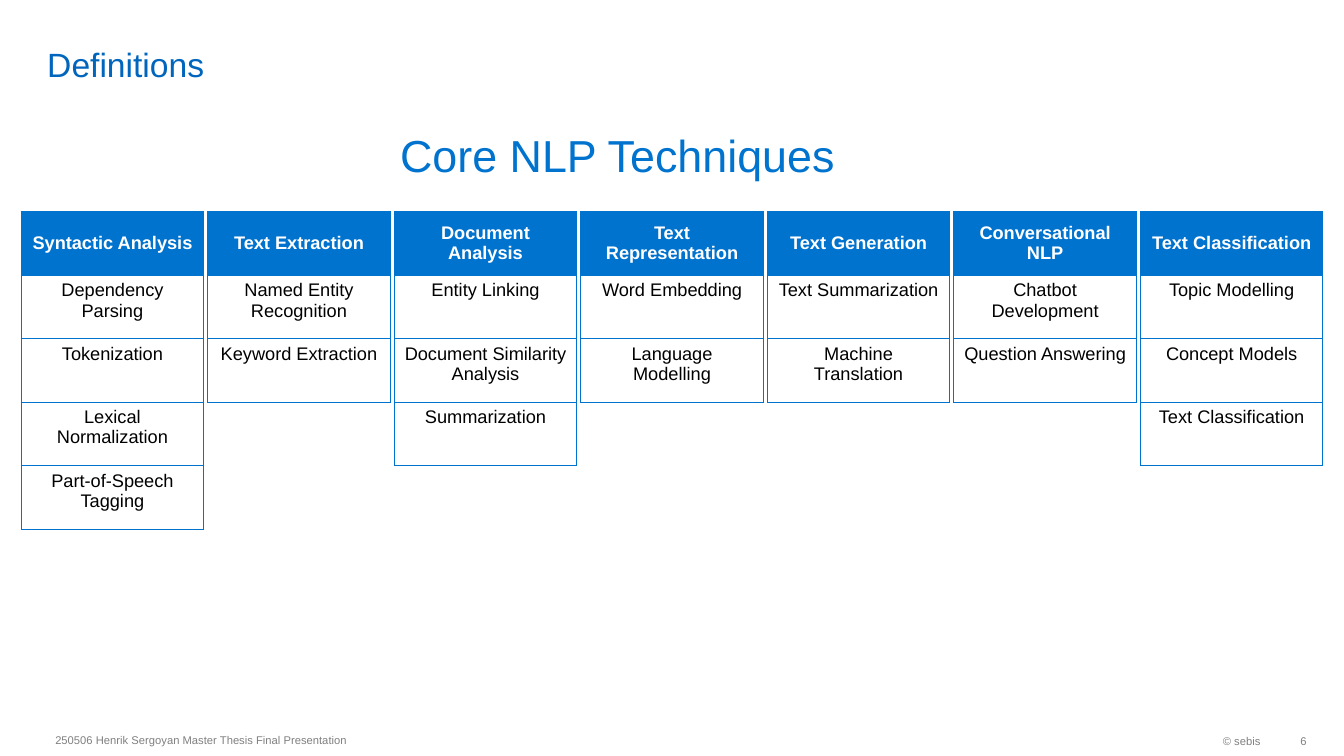
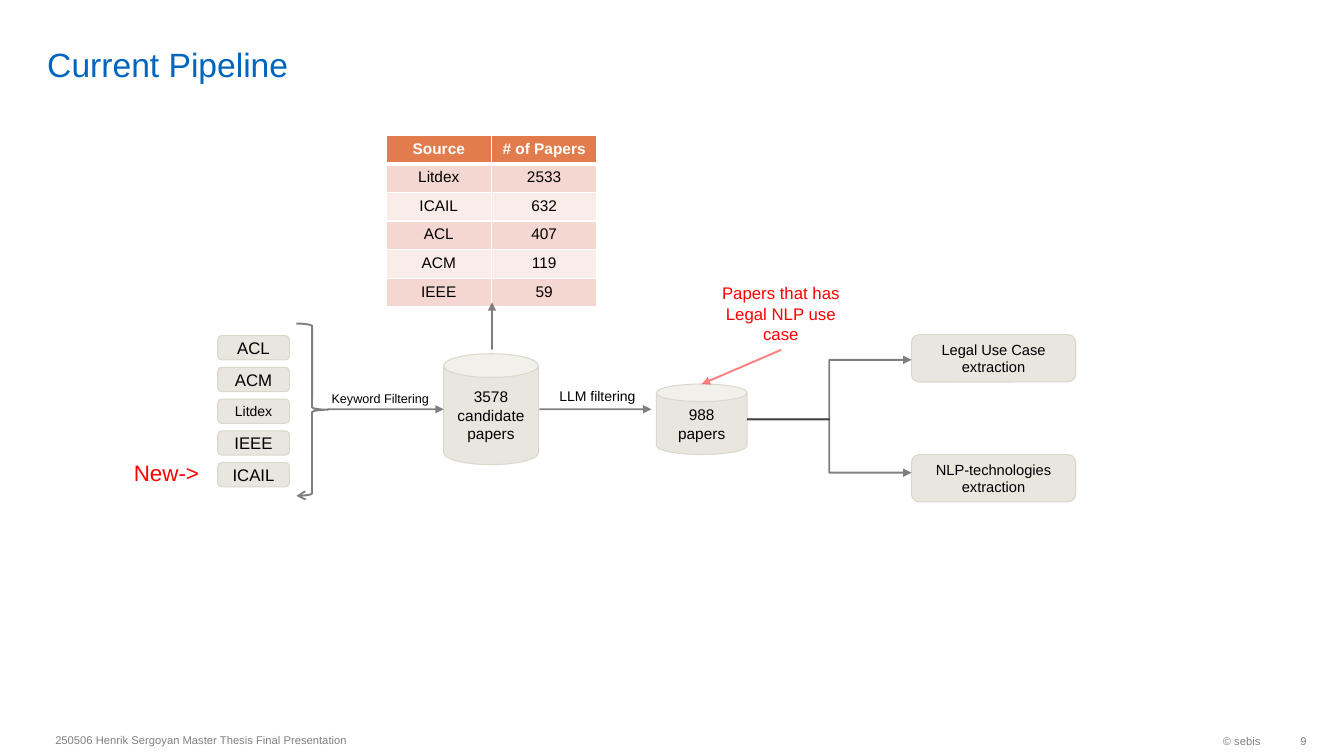
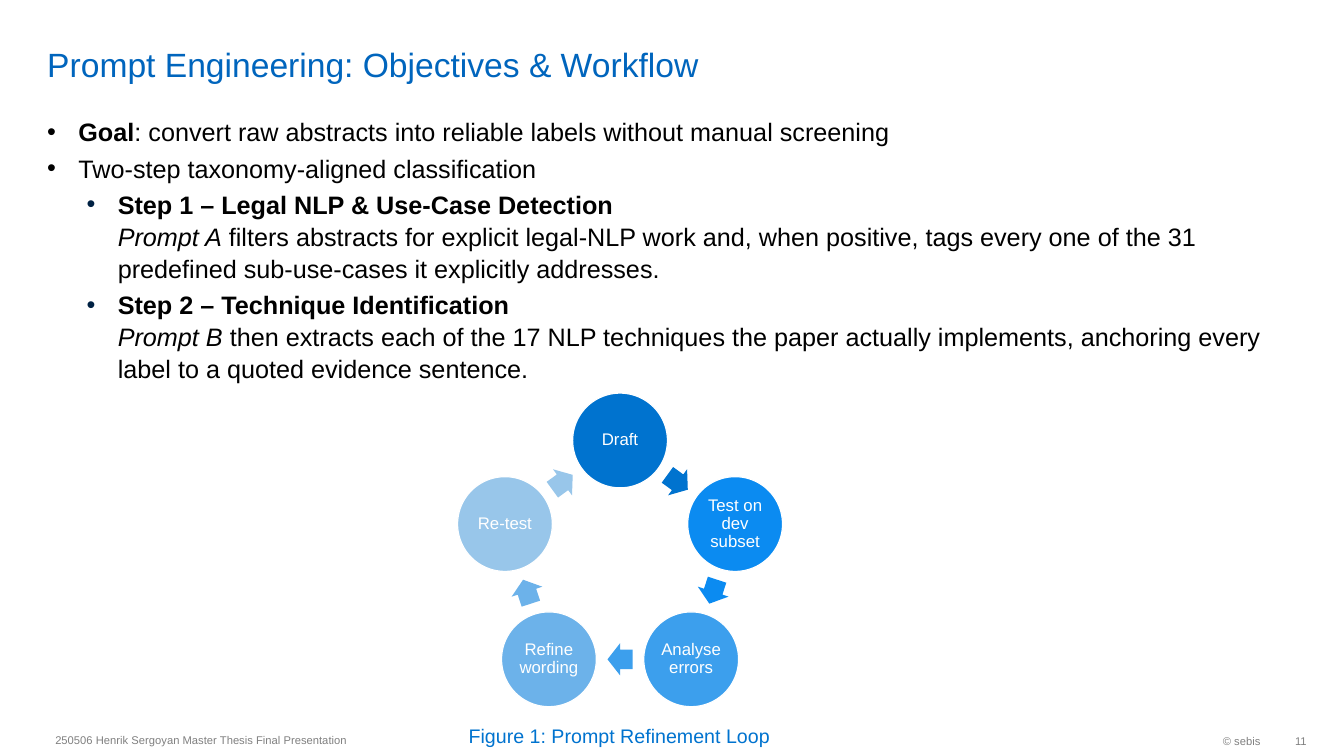
import math
from dataclasses import dataclass
from typing import NamedTuple

import lxml.etree
import pptx
import pptx.dml.color
import pptx.enum.dml
import pptx.enum.shapes
import pptx.enum.text
import pptx.oxml.ns
import pptx.slide
import pptx.text.text
import pptx.util

Inches = pptx.util.Inches
Pt = pptx.util.Pt
qn = pptx.oxml.ns.qn
Geometry = pptx.enum.shapes.MSO_SHAPE
Link = pptx.enum.shapes.MSO_CONNECTOR
Align = pptx.enum.text.PP_ALIGN
Anchor = pptx.enum.text.MSO_ANCHOR


@dataclass(frozen=True)
class Theme:
    font: str = "Arial"
    title: str = "0065BD"
    blue: str = "0073CF"
    navy: str = "002143"
    black: str = "000000"
    white: str = "FFFFFF"
    grey: str = "808080"
    red: str = "FF0000"
    node_fill: str = "E8E6DF"
    node_line: str = "DAD7CB"
    orange: str = "E37C4D"
    bands: tuple[str, ...] = ("F4D7D0", "FAECE9")
    title_size: float = 24
    heading_size: float = 32
    body_size: float = 18
    caption_size: float = 14
    technique_size: float = 13
    label_size: float = 12
    node_size: float = 11
    outcome_size: float = 10.5
    small_size: float = 10
    tiny_size: float = 9
    footer_size: float = 8


THEME = Theme()


class Box(NamedTuple):
    left: float
    top: float
    width: float
    height: float

    def lengths(self) -> list[int]:
        return [Inches(value) for value in self]


class Point(NamedTuple):
    x: float
    y: float


@dataclass(frozen=True)
class TextStyle:
    size: float
    color: str = THEME.black
    align: Align = Align.LEFT
    anchor: Anchor = Anchor.TOP
    insets: tuple[float, float, float, float] = (0.1, 0.05, 0.1, 0.05)
    wrap: bool = True
    bold: bool = False
    spacing: float = 1.0


@dataclass(frozen=True)
class TableStyle:
    size: float
    header_fill: str
    body_fills: tuple[str, ...]
    border: str
    border_width: float
    header_rule: float


@dataclass(frozen=True)
class Node:
    text: str
    box: Box
    size: float
    geometry: Geometry = Geometry.ROUNDED_RECTANGLE


@dataclass(frozen=True)
class Arrow:
    start: Point
    end: Point
    color: str = THEME.black
    route: Link = Link.STRAIGHT


@dataclass(frozen=True)
class Label:
    text: str
    box: Box
    style: TextStyle


class Span(NamedTuple):
    text: str
    bold: bool = False
    italic: bool = False


@dataclass(frozen=True)
class Bullet:
    spans: tuple[Span, ...]
    indent: float
    color: str


def rgb(color: str) -> pptx.dml.color.RGBColor:
    return pptx.dml.color.RGBColor.from_string(color)


# Text, shapes and lines
def set_font(run: pptx.text.text._Run, size: float, color: str, bold: bool, italic: bool = False) -> None:
    run.font.name, run.font.size = THEME.font, Pt(size)
    run.font.bold, run.font.italic = bold, italic
    run.font.color.rgb = rgb(color)


def set_text(frame: pptx.text.text.TextFrame, text: str, style: TextStyle) -> None:
    frame.text = text
    frame.word_wrap = style.wrap
    frame.vertical_anchor = style.anchor
    (frame.margin_left, frame.margin_top,
     frame.margin_right, frame.margin_bottom) = [Inches(inset) for inset in style.insets]
    for paragraph in frame.paragraphs:
        paragraph.alignment = style.align
        paragraph.line_spacing = style.spacing
        for run in paragraph.runs:
            set_font(run, style.size, style.color, style.bold)


def add_label(slide: pptx.slide.Slide, label: Label) -> None:
    set_text(slide.shapes.add_textbox(*label.box.lengths()).text_frame, label.text, label.style)


def add_shape(slide: pptx.slide.Slide, geometry: Geometry, box: Box, fill: str | None,
              line: str | None, width: float = 0.75):
    shape = slide.shapes.add_shape(geometry, *box.lengths())
    shape.shadow.inherit = False
    if fill:
        shape.fill.solid()
        shape.fill.fore_color.rgb = rgb(fill)
    else:
        shape.fill.background()
    if line:
        shape.line.color.rgb = rgb(line)
        shape.line.width = Pt(width)
    else:
        shape.line.fill.background()
    return shape


def add_node(slide: pptx.slide.Slide, node: Node) -> None:
    shape = add_shape(slide, node.geometry, node.box, THEME.node_fill, THEME.node_line)
    set_text(shape.text_frame, node.text,
             TextStyle(node.size, align=Align.CENTER, anchor=Anchor.MIDDLE))


def style_arrow(shape, color: str, tip: str) -> None:
    """Draw the outline half transparent, with a tip at its end."""
    shape.line.color.rgb = rgb(color)
    shape.line.width = Pt(1.35)
    outline = shape.element.spPr.find(qn("a:ln"))
    tint = outline.find(f"{qn('a:solidFill')}/{qn('a:srgbClr')}")
    lxml.etree.SubElement(tint, qn("a:alpha"), val="50000")
    lxml.etree.SubElement(outline, qn("a:tailEnd"), type=tip)


def add_arrow(slide: pptx.slide.Slide, arrow: Arrow) -> None:
    ends = [Inches(value) for value in (*arrow.start, *arrow.end)]
    connector = slide.shapes.add_connector(arrow.route, *ends)
    style_arrow(connector, arrow.color, "triangle")
    lxml.etree.SubElement(connector.element.spPr, qn("a:effectLst"))


# Tables
def set_borders(cell, color: str, widths: dict[str, float]) -> None:
    properties = cell._tc.get_or_add_tcPr()
    for side, width in widths.items():
        border = lxml.etree.SubElement(properties, qn(f"a:ln{side}"), w=str(Pt(width)))
        fill = lxml.etree.SubElement(border, qn("a:solidFill"))
        lxml.etree.SubElement(fill, qn("a:srgbClr"), val=color)


def add_table(slide: pptx.slide.Slide, box: Box, rows: list[tuple[str, ...]], style: TableStyle) -> None:
    table = slide.shapes.add_table(len(rows), len(rows[0]), *box.lengths()).table
    table.horz_banding = False
    for row_index, row in enumerate(rows):
        table.rows[row_index].height = Inches(box.height / len(rows))
        header = row_index == 0
        fill = style.header_fill if header else style.body_fills[(row_index - 1) % len(style.body_fills)]
        widths = dict.fromkeys("LRTB", style.border_width)
        if header:
            widths["B"] = style.header_rule
        elif row_index == 1:
            widths["T"] = style.header_rule
        for column_index, text in enumerate(row):
            cell = table.cell(row_index, column_index)
            set_borders(cell, style.border, widths)
            cell.fill.solid()
            cell.fill.fore_color.rgb = rgb(fill)
            set_text(cell.text_frame, text, TextStyle(
                style.size, THEME.white if header else THEME.black, Align.CENTER, bold=header))
            cell.vertical_anchor = Anchor.MIDDLE if header else Anchor.TOP


# Title and footer of every slide
def add_slide(deck, title: str, number: int) -> pptx.slide.Slide:
    slide = deck.slides.add_slide(deck.slide_layouts[6])
    footer = TextStyle(THEME.footer_size, THEME.grey, anchor=Anchor.MIDDLE)
    right = TextStyle(THEME.footer_size, THEME.grey, Align.RIGHT, Anchor.MIDDLE)
    page = TextStyle(THEME.footer_size, THEME.grey, Align.RIGHT, Anchor.MIDDLE, (0.1, 0.05, 0, 0.05))
    heading = TextStyle(THEME.title_size, THEME.title, anchor=Anchor.BOTTOM, insets=(0.1, 0, 0.1, 0))
    for label in (
        Label(title, Box(0.37, 0.05, 11.58, 0.79), heading),
        Label("250506 Henrik Sergoyan Master Thesis Final Presentation", Box(0.45, 7.18, 6.3, 0.32), footer),
        Label("© sebis", Box(10.26, 7.19, 2.34, 0.32), right),
        Label(str(number), Box(12.6, 7.19, 0.36, 0.32), page),
    ):
        add_label(slide, label)
    return slide


# Definitions
TECHNIQUES = (
    ("Syntactic Analysis", "Dependency Parsing", "Tokenization", "Lexical Normalization",
     "Part-of-Speech Tagging"),
    ("Text Extraction", "Named Entity Recognition", "Keyword Extraction"),
    ("Document Analysis", "Entity Linking", "Document Similarity Analysis", "Summarization"),
    ("Text Representation", "Word Embedding", "Language Modelling"),
    ("Text Generation", "Text Summarization", "Machine Translation"),
    ("Conversational NLP", "Chatbot Development", "Question Answering"),
    ("Text Classification", "Topic Modelling", "Concept Models", "Text Classification"),
)


def build_definitions(deck) -> None:
    slide = add_slide(deck, "Definitions", 6)
    add_label(slide, Label("Core NLP Techniques", Box(3.87, 1.22, 4.54, 0.64),
                           TextStyle(THEME.heading_size, THEME.blue, wrap=False)))
    style = TableStyle(THEME.technique_size, THEME.blue, (THEME.white,), THEME.blue, 0.75, 0.75)
    for index, family in enumerate(TECHNIQUES):
        box = Box(0.21 + 1.85 * index, 2.1, 1.81, 0.63 * len(family))
        add_table(slide, box, [(technique,) for technique in family], style)


# Current pipeline
SOURCES = (("ACL", THEME.label_size), ("ACM", THEME.label_size), ("Litdex", THEME.small_size),
           ("IEEE", THEME.label_size), ("ICAIL", THEME.label_size))
PAPER_COUNTS = [("Source", "# of Papers"), ("Litdex", "2533"), ("ICAIL", "632"),
                ("ACL", "407"), ("ACM", "119"), ("IEEE", "59")]
STAGES = (
    Node("3578\ncandidate papers", Box(4.4, 3.51, 0.94, 1.1), THEME.node_size, Geometry.CAN),
    Node("988\npapers", Box(6.51, 3.81, 0.9, 0.7), THEME.node_size, Geometry.CAN),
    Node("NLP-technologies extraction", Box(9.04, 4.51, 1.63, 0.47), THEME.outcome_size),
    Node("Legal Use Case extraction", Box(9.04, 3.32, 1.63, 0.47), THEME.outcome_size),
)
FLOWS = (
    Arrow(Point(3.25, 4.06), Point(4.4, 4.06)),
    Arrow(Point(5.35, 4.06), Point(6.46, 4.06)),
    Arrow(Point(7.75, 3.47), Point(6.96, 3.81), THEME.red),
    Arrow(Point(7.41, 4.16), Point(9.04, 4.69), route=Link.ELBOW),
    Arrow(Point(7.41, 4.16), Point(9.04, 3.57), route=Link.ELBOW),
    Arrow(Point(4.88, 3.47), Point(4.88, 3)),
)
PIPELINE_LABELS = (
    Label("New->", Box(1.23, 4.51, 0.87, 0.37), TextStyle(16, THEME.red)),
    Label("Keyword Filtering", Box(3.19, 3.83, 1.22, 0.25), TextStyle(THEME.tiny_size)),
    Label("LLM filtering", Box(5.45, 3.8, 0.98, 0.27), TextStyle(THEME.small_size)),
    Label("Papers that has Legal NLP use case", Box(6.96, 2.76, 1.57, 0.71),
          TextStyle(THEME.label_size, THEME.red, Align.CENTER)),
)


def build_pipeline(deck) -> None:
    slide = add_slide(deck, "Current Pipeline", 9)
    first, last = 3.33, 4.59
    pitch = (last - first) / (len(SOURCES) - 1)
    for index, (source, size) in enumerate(SOURCES):
        add_node(slide, Node(source, Box(2.16, first + pitch * index, 0.71, 0.24), size))
    brace = add_shape(slide, Geometry.RIGHT_BRACE, Box(2.94, 3.21, 0.31, 1.71), None, THEME.black)
    style_arrow(brace, THEME.black, "arrow")
    for stage in STAGES:
        add_node(slide, stage)
    add_table(slide, Box(3.83, 1.34, 2.09, 1.7), PAPER_COUNTS,
              TableStyle(THEME.node_size, THEME.orange, THEME.bands, THEME.white, 1, 3))
    for flow in FLOWS:
        add_arrow(slide, flow)
    for label in PIPELINE_LABELS:
        add_label(slide, label)


# Prompt engineering
BULLETS = (
    Bullet((Span("Goal", bold=True),
            Span(": convert raw abstracts into reliable labels without manual screening")),
           0.31, THEME.black),
    Bullet((Span("Two-step taxonomy-aligned classification"),), 0.31, THEME.black),
    Bullet((Span("Step 1 – Legal NLP & Use-Case Detection\n", bold=True), Span("Prompt A", italic=True),
            Span(" filters abstracts for explicit legal-NLP work and, when positive, tags every one "
                 "of the 31 predefined sub-use-cases it explicitly addresses.")), 0.7, THEME.navy),
    Bullet((Span("Step 2 – Technique Identification\n", bold=True), Span("Prompt B", italic=True),
            Span(" then extracts each of the 17 NLP techniques the paper actually implements, "
                 "anchoring every label to a quoted evidence sentence.")), 0.7, THEME.navy),
)
LOOP = (("Draft", THEME.blue), ("Test on dev subset", "0B8BF1"), ("Analyse errors", "3C9FED"),
        ("Refine wording", "6CB2EA"), ("Re-test", "98C6EA"))


def add_bullets(slide: pptx.slide.Slide, box: Box) -> None:
    frame = slide.shapes.add_textbox(*box.lengths()).text_frame
    frame.word_wrap = True
    for index, bullet in enumerate(BULLETS):
        paragraph = frame.add_paragraph() if index else frame.paragraphs[0]
        paragraph.line_spacing = 1.06
        if index:
            paragraph.space_before = Pt(3)
        properties = paragraph._p.get_or_add_pPr()
        properties.set("marL", str(Inches(bullet.indent)))
        properties.set("indent", str(Inches(-0.31)))
        tint = lxml.etree.SubElement(properties, qn("a:buClr"))
        lxml.etree.SubElement(tint, qn("a:srgbClr"), val=bullet.color)
        lxml.etree.SubElement(properties, qn("a:buFont"), typeface=THEME.font)
        lxml.etree.SubElement(properties, qn("a:buChar"), char="•")
        for span in bullet.spans:
            run = paragraph.add_run()
            run.text = span.text.rstrip("\n")
            set_font(run, THEME.body_size, THEME.black, span.bold, span.italic)
            if span.text.endswith("\n"):
                paragraph.add_line_break()


def centred(radius: float, degrees: float, width: float, height: float) -> Box:
    """Box centred on the loop, at an angle clockwise from the top."""
    angle = math.radians(degrees)
    return Box(6.15 + radius * math.sin(angle) - width / 2,
               5.57 - radius * math.cos(angle) - height / 2, width, height)


def add_loop(slide: pptx.slide.Slide) -> None:
    radius, step = 1.2, 360 / len(LOOP)
    style = TextStyle(THEME.label_size, THEME.white, Align.CENTER, Anchor.MIDDLE,
                      (0.02, 0.02, 0.02, 0.02), spacing=0.9)
    for index, (phase, color) in enumerate(LOOP):
        circle = add_shape(slide, Geometry.OVAL, centred(radius, step * index, 0.94, 0.94),
                           color, THEME.white, 0.85)
        set_text(circle.text_frame, phase, style)
        halfway = step * (index + 0.5)
        chord = radius * math.cos(math.radians(step / 2))
        pointer = add_shape(slide, Geometry.RIGHT_ARROW, centred(chord, halfway, 0.25, 0.32), color, None)
        pointer.adjustments[0], pointer.adjustments[1] = 0.6, 0.5
        pointer.rotation = halfway


def build_prompts(deck) -> None:
    slide = add_slide(deck, "Prompt Engineering: Objectives & Workflow", 11)
    add_bullets(slide, Box(0.37, 1.09, 12.6, 2.7))
    add_loop(slide)
    add_label(slide, Label("Figure 1: Prompt Refinement Loop", Box(4.55, 7.13, 3.2, 0.34),
                           TextStyle(THEME.caption_size, THEME.blue, wrap=False)))


def main() -> None:
    deck = pptx.Presentation()
    deck.slide_width, deck.slide_height = Inches(13.33), Inches(7.5)
    build_definitions(deck)
    build_pipeline(deck)
    build_prompts(deck)
    deck.save("out.pptx")


if __name__ == "__main__":
    main()
